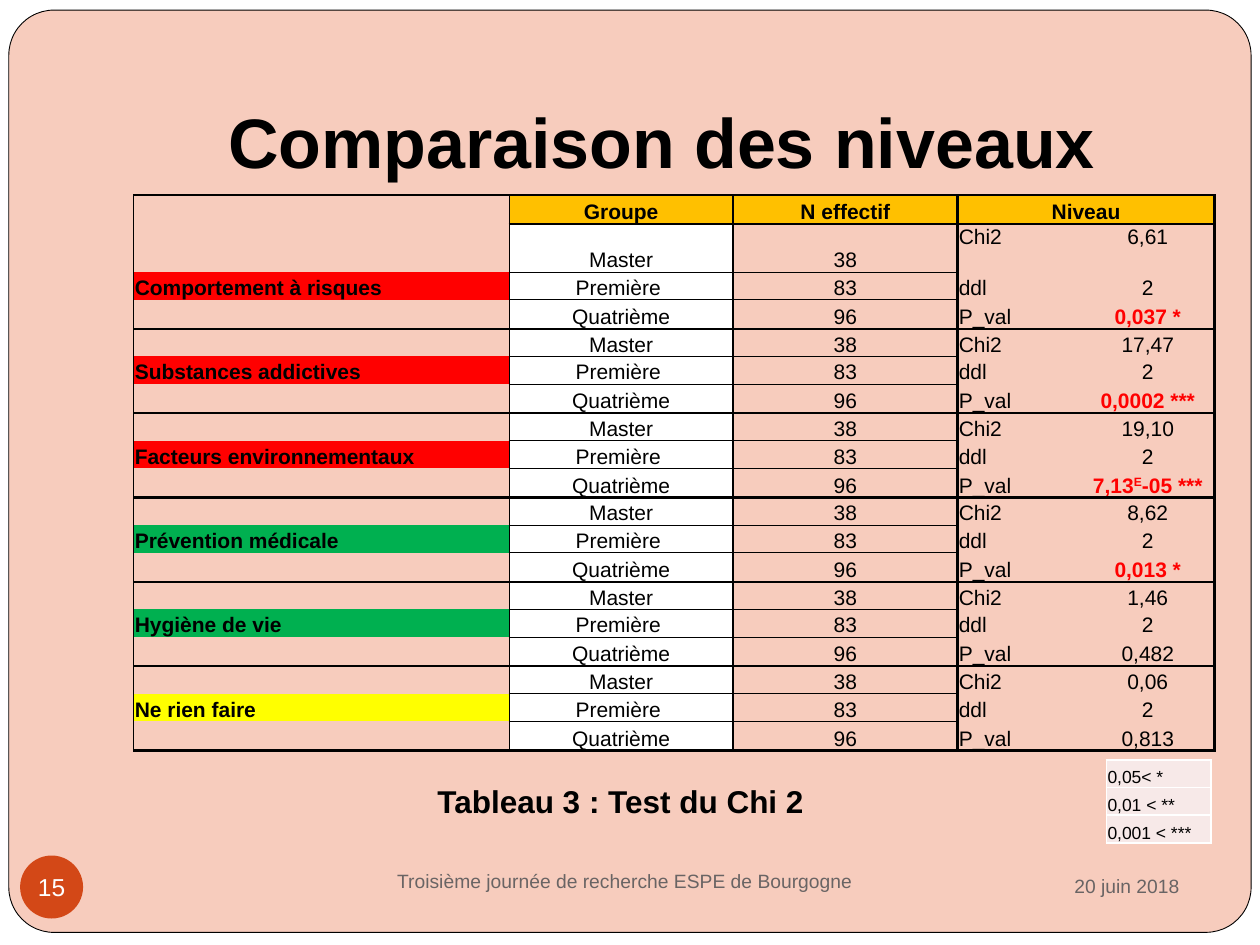
import dataclasses

import lxml.etree
import pptx
import pptx.dml.color
import pptx.enum.shapes
import pptx.enum.text
import pptx.oxml.ns
import pptx.util

Inches = pptx.util.Inches
Align = pptx.enum.text.PP_ALIGN
Anchor = pptx.enum.text.MSO_ANCHOR
Shape = pptx.enum.shapes.MSO_SHAPE
qn = pptx.oxml.ns.qn


@dataclasses.dataclass(frozen=True)
class Theme:
    font: str = "Arial"
    black: str = "000000"
    white: str = "FFFFFF"
    grey: str = "696464"
    panel: str = "F4B39B"
    badge: str = "D34817"
    head: str = "FFC000"
    red: str = "FF0000"
    green: str = "00B050"
    yellow: str = "FFFF00"
    pale: str = "F7E9E8"
    title: int = 40
    note: int = 18
    page: int = 14
    body: int = 12
    foot: int = 11
    key: int = 10
    thin: float = 0.5
    thick: float = 1.5


THEME = Theme()
GROUPS = [
    ("Comportement à risques", THEME.red, "6,61", "0,037 *"),
    ("Substances addictives", THEME.red, "17,47", "0,0002 ***"),
    ("Facteurs environnementaux", THEME.red, "19,10", "7,13E-05 ***"),
    ("Prévention médicale", THEME.green, "8,62", "0,013 *"),
    ("Hygiène de vie", THEME.green, "1,46", "0,482"),
    ("Ne rien faire", THEME.yellow, "0,06", "0,813"),
]
LEVELS = [("Master", "38"), ("Première ", "83"), ("Quatrième", "96")]


def rgb(code):
    return pptx.dml.color.RGBColor.from_string(code)


def write(para, text, size=THEME.body, color=THEME.black, bold=False, align=None, rise=0):
    if align is not None:
        para.alignment = align
    run = para.add_run()
    run.text = text
    font = run.font
    font.name, font.size, font.bold = THEME.font, pptx.util.Pt(size), bold
    font.color.rgb = rgb(color)
    if rise:
        run._r.get_or_add_rPr().set("baseline", str(rise * 1000))


class Deck:
    """Builds a slide in one theme, with a method for each kind of element."""

    def __init__(self, theme):
        self.theme = theme
        self.file = pptx.Presentation()
        self.file.slide_width, self.file.slide_height = Inches(10), Inches(7.5)
        self.slide = self.file.slides.add_slide(self.file.slide_layouts[5])
        self.shapes = self.slide.shapes

    def panel(self, box):
        shape = self.shape(Shape.ROUNDED_RECTANGLE, box, self.theme.panel)
        shape.adjustments[0] = 0.049
        shape.line.color.rgb = rgb(self.theme.black)
        shape.line.width = pptx.util.Pt(self.theme.thin)
        color = shape._element.spPr.find(qn("a:solidFill"))[0]
        lxml.etree.SubElement(color, qn("a:alpha"), val="66000")
        self.shapes._spTree.insert(2, shape._element)

    def shape(self, kind, box, fill):
        shape = self.shapes.add_shape(kind, *map(Inches, box))
        shape.shadow.inherit = False
        shape.fill.solid()
        shape.fill.fore_color.rgb = rgb(fill)
        shape.line.fill.background()
        return shape

    def title(self, box, text):
        shape = self.shapes.title
        shape.left, shape.top, shape.width, shape.height = map(Inches, box)
        frame = shape.text_frame
        frame.auto_size = pptx.enum.text.MSO_AUTO_SIZE.NONE
        frame.vertical_anchor = Anchor.BOTTOM
        frame.margin_bottom = Inches(0.1)
        write(frame.paragraphs[0], text, size=self.theme.title, bold=True, align=Align.CENTER)

    def label(self, box, text, anchor=Anchor.MIDDLE, **style):
        frame = self.shapes.add_textbox(*map(Inches, box)).text_frame
        frame.word_wrap = True
        frame.vertical_anchor = anchor
        write(frame.paragraphs[0], text, **style)

    def badge(self, box, text):
        frame = self.shape(Shape.OVAL, box, self.theme.badge).text_frame
        frame.margin_left = frame.margin_right = frame.margin_top = frame.margin_bottom = 0
        frame.word_wrap = False
        frame.vertical_anchor = Anchor.MIDDLE
        write(frame.paragraphs[0], text, size=self.theme.page,
              color=self.theme.white, align=Align.CENTER)

    def table(self, left, top, cols, rows):
        box = map(Inches, (left, top, sum(cols), sum(rows)))
        table = self.shapes.add_table(len(rows), len(cols), *box).table
        table.first_row = table.horz_banding = False
        for col, width in zip(table.columns, cols):
            col.width = Inches(width)
        for row, height in zip(table.rows, rows):
            row.height = Inches(height)
        return table

    def cell(self, cell, edges, fill=None, line=THEME.black, anchor=Anchor.BOTTOM):
        cell.margin_left = cell.margin_right = cell.margin_top = Inches(0.01)
        cell.margin_bottom = 0
        cell.vertical_anchor = anchor
        for side, width in zip("LRTB", edges):
            edge = lxml.etree.SubElement(
                cell._tc.get_or_add_tcPr(), qn(f"a:ln{side}"), w=str(pptx.util.Pt(width)))
            if width:
                paint = lxml.etree.SubElement(edge, qn("a:solidFill"))
                lxml.etree.SubElement(paint, qn("a:srgbClr"), val=line)
            else:
                lxml.etree.SubElement(edge, qn("a:noFill"))
        if fill:
            cell.fill.solid()
            cell.fill.fore_color.rgb = rgb(fill)
        else:
            cell.fill.background()
        return cell.text_frame.paragraphs[0]

    def blank(self, para):
        size = str(self.theme.body * 100)
        lxml.etree.SubElement(para._p, qn("a:endParaRPr"), sz=size)

    def stat(self, para, name, value):
        tabs = lxml.etree.SubElement(para._p.get_or_add_pPr(), qn("a:tabLst"))
        lxml.etree.SubElement(tabs, qn("a:tab"), pos=str(Inches(1.5)), algn="ctr")
        write(para, name + "\t")
        star = "*" in value
        style = {"color": self.theme.red if star else self.theme.black, "bold": star}
        base, power, rest = value.partition("E")
        write(para, base, **style)
        if power:
            write(para, power, rise=30, **style)
            write(para, rest, **style)

    def results(self):
        look = self.theme
        thin, thick = look.thin, look.thick
        rows = [0.23, 0.38] + [0.22, 0.23, 0.22] * 5 + [0.22, 0.23]
        table = self.table(1.06, 1.55, [2.98, 1.78, 1.78, 2.04], rows)
        self.blank(self.cell(table.cell(0, 0), (thin, thin, thick, 0)))
        for col, text in enumerate(["Groupe", "N effectif", "Niveau"], 1):
            left = thin if col == 1 else thick
            para = self.cell(table.cell(0, col), (left, thick, thick, thick), look.head)
            write(para, text, bold=True, align=Align.CENTER)
        for group, (topic, color, chi, prob) in enumerate(GROUPS):
            stats = [("Chi2", chi), ("ddl", "2"), ("P_val", prob)]
            for step, (level, count) in enumerate(LEVELS):
                row = 1 + 3 * group + step
                above = thick if step == 0 else 0
                below = thick if step == 2 else 0
                over = 0 if row == 1 else above
                para = self.cell(table.cell(row, 0), (thin, thin, over, below),
                                 color if step == 1 else None)
                if step == 1:
                    write(para, topic, bold=True)
                else:
                    self.blank(para)
                inner = above or thin, below or thin
                para = self.cell(table.cell(row, 1), (thin, thick, *inner), look.white)
                write(para, level, align=Align.CENTER)
                para = self.cell(table.cell(row, 2), (thick, thick, *inner))
                write(para, count, align=Align.CENTER)
                para = self.cell(table.cell(row, 3), (thick, thick, above, below),
                                 anchor=Anchor.TOP if row == 1 else Anchor.BOTTOM)
                self.stat(para, *stats[step])

    def legend(self, texts):
        table = self.table(8.78, 6.03, [0.83], [0.22] * len(texts))
        for row, text in enumerate(texts):
            para = self.cell(table.cell(row, 0), [1] * 4, self.theme.pale, self.theme.white)
            write(para, text, size=self.theme.key)


def main():
    deck = Deck(THEME)
    deck.panel((0.07, 0.08, 9.86, 7.32))
    deck.title((1, 0.3, 8.5, 1.25), "Comparaison des niveaux")
    deck.results()
    deck.legend(["0,05< *", "0,01 < **", "0,001 < ***"])
    deck.label((2.4, 6.16, 5.12, 0.4), "Tableau 3 : Test du Chi 2 ", Anchor.TOP,
               size=THEME.note, bold=True, align=Align.CENTER)
    foot = {"size": THEME.foot, "color": THEME.grey}
    deck.label((6.75, 6.77, 2.71, 0.52), "20 juin 2018", align=Align.RIGHT, **foot)
    deck.label((1.62, 6.74, 6.68, 0.5), "Troisième journée de recherche ESPE de Bourgogne",
               align=Align.CENTER, **foot)
    deck.badge((0.16, 6.79, 0.5, 0.5), "15")
    deck.file.save("out.pptx")


if __name__ == "__main__":
    main()
